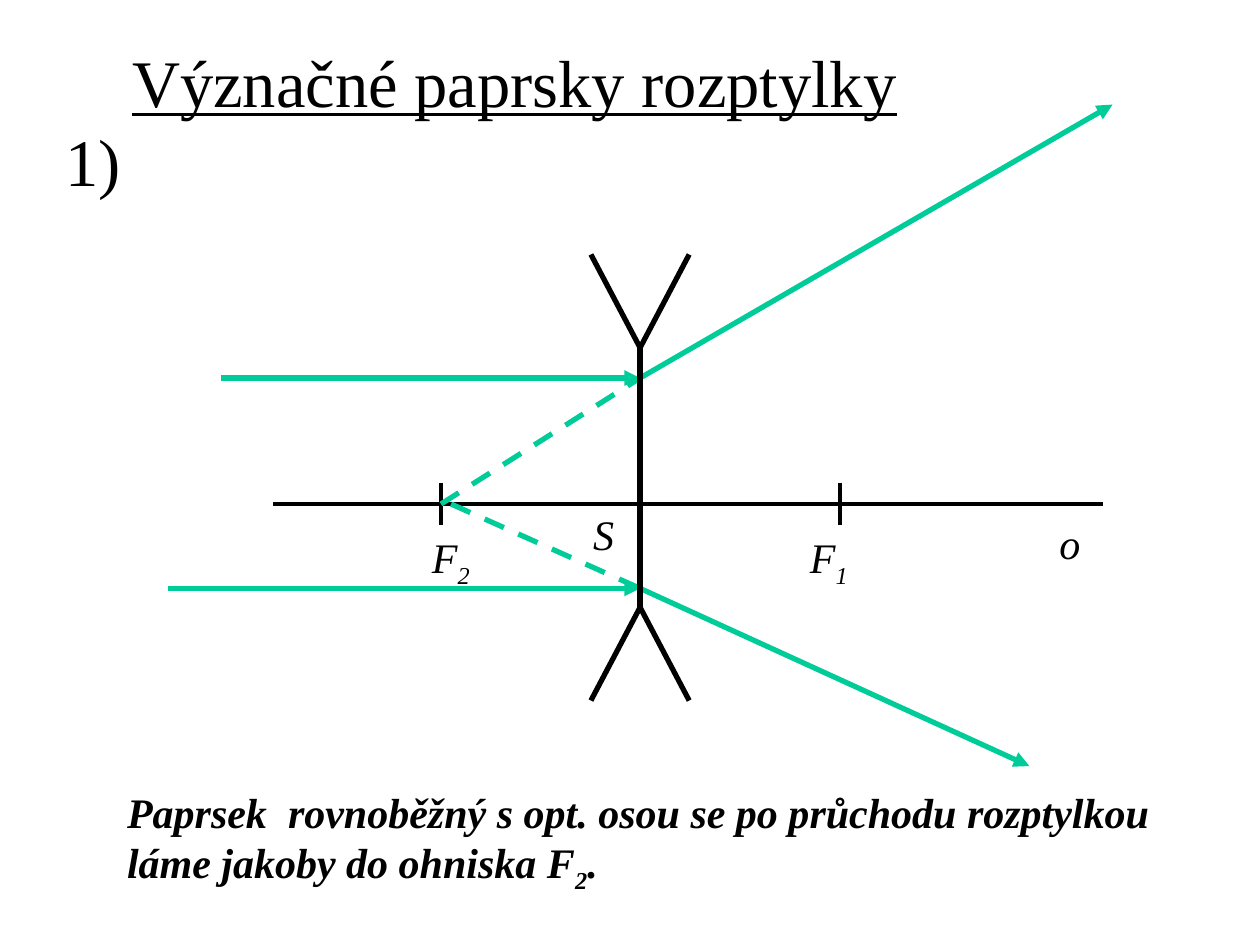
from lxml.etree import SubElement
from pptx import Presentation
from pptx.dml.color import RGBColor
from pptx.enum.dml import MSO_LINE
from pptx.enum.text import MSO_ANCHOR, PP_ALIGN
from pptx.oxml.ns import qn
from pptx.util import Inches, Pt

"""Build a slide on the principal rays of a diverging lens."""

COLORS = {"ink": "000000", "ray": "00CC99"}
AXIS, LENS = 4, 5.08
HIGH, LOW = 3, 4.67
TOP, BASE = 2.76, 4.82
FOCI = (3.5, 6.67)


def add_line(shapes, start, end, color="ink", width=3, dash=False, arrow=False):
    """Draw a straight line, dashed or with an arrowhead if asked."""
    line = shapes.add_connector(1, *map(Inches, start + end))
    line.line.color.rgb = RGBColor.from_string(COLORS[color])
    line.line.width = Pt(width)
    if dash:
        line.line.dash_style = MSO_LINE.DASH
    if arrow:
        SubElement(line.line._get_or_add_ln(), qn("a:tailEnd"), type="triangle")
    SubElement(line._element.spPr, qn("a:effectLst"))


def add_text(shapes, box, lines, size=24, **style):
    """Add a text box; an underscore in a line lowers the next letter."""
    frame = shapes.add_textbox(*map(Inches, box)).text_frame
    frame.word_wrap = True
    for i, line in enumerate(lines):
        para = frame.paragraphs[0] if i == 0 else frame.add_paragraph()
        font = para.font
        font.name, font.size = "Times New Roman", Pt(size)
        font.color.rgb = RGBColor.from_string(COLORS["ink"])
        for name, value in style.items():
            setattr(font, name, value)
        head, *parts = line.split("_")
        para.add_run().text = head
        for part in parts:
            sub = para.add_run()
            sub.text = part[0]
            sub._r.get_or_add_rPr().set("baseline", "-25000")
            if part[1:]:
                para.add_run().text = part[1:]
    return frame


def add_title(shapes):
    """Add the centred heading and the number of the ray."""
    frame = add_text(shapes, (0.42, 0.33, 7.33, 1.25),
                     ["Význačné paprsky rozptylky", "1)"], 38)
    frame.vertical_anchor = MSO_ANCHOR.MIDDLE
    head = frame.paragraphs[0]
    head.alignment = PP_ALIGN.CENTER
    head.font.underline = True


def add_axis(shapes):
    """Draw the optical axis with a tick at each focus."""
    add_line(shapes, (2.17, AXIS), (8.75, AXIS), width=2.25)
    for x in FOCI:
        add_line(shapes, (x, AXIS - 0.17), (x, AXIS + 0.17), width=2.25)


def add_ray(shapes, start, y, end, focus):
    """Draw a ray into the lens, out of it, and its dashed extension."""
    hit = (LENS, y)
    add_line(shapes, (start, y), hit, "ray", arrow=True)
    add_line(shapes, hit, end, "ray", arrow=True)
    add_line(shapes, (focus, AXIS), hit, "ray", dash=True)


def add_lens(shapes):
    """Draw the diverging lens symbol as one group."""
    lens = shapes.add_group_shape().shapes
    add_line(lens, (LENS, TOP), (LENS, BASE))
    for y, rise in ((TOP, -0.74), (BASE, 0.74)):
        for side in (-0.39, 0.39):
            add_line(lens, (LENS + side, y + rise), (LENS, y))


def main():
    """Build and save the slide."""
    deck = Presentation()
    deck.slide_width, deck.slide_height = Inches(10), Inches(7.5)
    shapes = deck.slides.add_slide(deck.slide_layouts[6]).shapes
    add_title(shapes)
    add_axis(shapes)
    add_ray(shapes, 1.33, LOW, (8.17, 6.08), 3.58)
    add_ray(shapes, 1.75, HIGH, (8.83, 0.83), 3.5)
    add_lens(shapes)
    for text, x, y, wide in (("F_2", 3.33, 4.17, 0.67), ("F_1", 6.33, 4.17, 0.64),
                             ("o", 8.31, 4.06, 0.64), ("S", 4.61, 3.99, 0.47)):
        add_text(shapes, (x, y, wide, 0.5), [text], italic=True)
    add_text(shapes, (0.91, 6.19, 8.68, 0.9),
             ["Paprsek  rovnoběžný s opt. osou se po průchodu rozptylkou",
              "láme jakoby do ohniska F_2."], bold=True, italic=True)
    deck.save("out.pptx")


if __name__ == "__main__":
    main()
